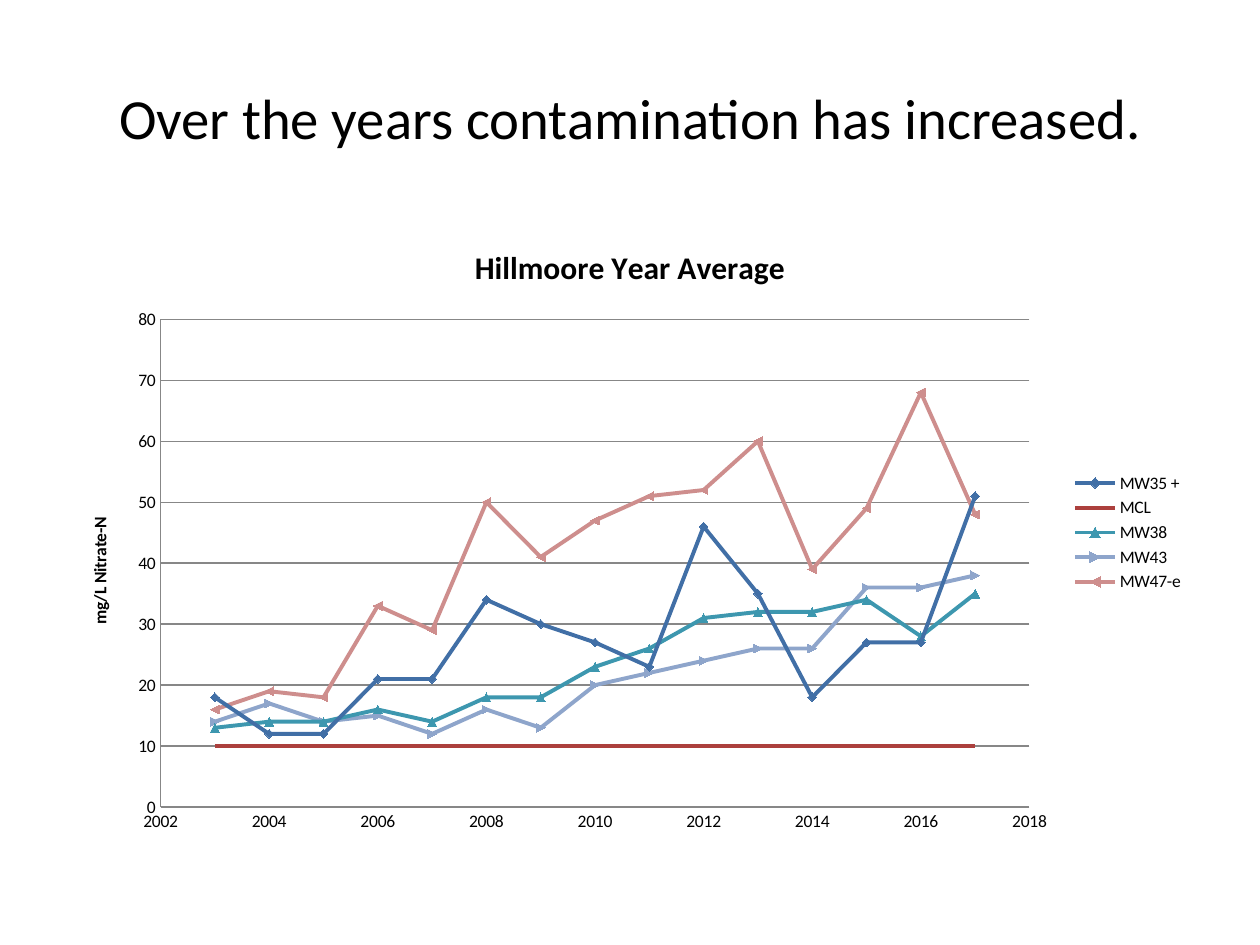
from pptx import Presentation
from pptx.chart.data import XyChartData
from pptx.dml.color import RGBColor
from pptx.enum.chart import (XL_CHART_TYPE, XL_LEGEND_POSITION,
                             XL_MARKER_STYLE, XL_TICK_MARK)
from pptx.enum.text import MSO_ANCHOR, PP_ALIGN
from pptx.util import Cm, Pt

FONT = "Calibri"
BLACK = RGBColor(0x00, 0x00, 0x00)
GRID_GRAY = RGBColor(0x87, 0x87, 0x87)
BLUE = RGBColor(0x41, 0x6F, 0xA6)
RED = RGBColor(0xAC, 0x40, 0x3D)
TEAL = RGBColor(0x3D, 0x97, 0xAF)
LIGHT_BLUE = RGBColor(0x8E, 0xA5, 0xCB)
PINK = RGBColor(0xCE, 0x8E, 0x8D)

YEARS = range(2003, 2018)
# Name, colour, marker, yearly averages
WELLS = [
    ("MW35 +", BLUE, XL_MARKER_STYLE.DIAMOND,
     [18, 12, 12, 21, 21, 34, 30, 27, 23, 46, 35, 18, 27, 27, 51]),
    ("MCL", RED, XL_MARKER_STYLE.NONE, [10] * len(YEARS)),
    ("MW38", TEAL, XL_MARKER_STYLE.TRIANGLE,
     [13, 14, 14, 16, 14, 18, 18, 23, 26, 31, 32, 32, 34, 28, 35]),
    ("MW43", LIGHT_BLUE, XL_MARKER_STYLE.AUTOMATIC,
     [14, 17, 14, 15, 12, 16, 13, 20, 22, 24, 26, 26, 36, 36, 38]),
    ("MW47-e", PINK, XL_MARKER_STYLE.AUTOMATIC,
     [16, 19, 18, 33, 29, 50, 41, 47, 51, 52, 60, 39, 49, 68, 48]),
]


def format_text(text_frame, size, bold=False):
    font = text_frame.paragraphs[0].runs[0].font
    font.name, font.size, font.bold = FONT, Pt(size), bold
    font.color.rgb = BLACK


def add_title(slide, text):
    shape = slide.shapes.add_textbox(Cm(1.27), Cm(0.76), Cm(22.86), Cm(3.18))
    text_frame = shape.text_frame
    text_frame.word_wrap = True
    text_frame.vertical_anchor = MSO_ANCHOR.MIDDLE
    text_frame.text = text
    text_frame.paragraphs[0].alignment = PP_ALIGN.CENTER
    format_text(text_frame, 32.4)


def format_axis(axis, minimum, maximum, step):
    axis.minimum_scale, axis.maximum_scale = minimum, maximum
    axis.major_unit = step
    axis.major_tick_mark = axis.minor_tick_mark = XL_TICK_MARK.NONE
    axis.format.line.color.rgb = GRID_GRAY
    axis.tick_labels.number_format = "General"
    axis.tick_labels.number_format_is_linked = False


def format_series(series, color, marker):
    series.smooth = False
    series.format.line.color.rgb = color
    series.format.line.width = Pt(2.25)
    series.marker.style = marker
    if marker != XL_MARKER_STYLE.NONE:
        series.marker.size = 5
        series.marker.format.fill.solid()
        series.marker.format.fill.fore_color.rgb = color
        series.marker.format.line.color.rgb = color


def add_well_chart(slide, title):
    chart_data = XyChartData()
    for name, _, _, averages in WELLS:
        series_data = chart_data.add_series(name)
        for year, average in zip(YEARS, averages):
            series_data.add_data_point(year, average)
    chart = slide.shapes.add_chart(
        XL_CHART_TYPE.XY_SCATTER_LINES,
        Cm(1.27), Cm(4.45), Cm(22.86), Cm(12.57), chart_data).chart
    chart.font.name, chart.font.size = FONT, Pt(10)
    chart.font.color.rgb = BLACK
    chart.plots[0].vary_by_categories = False

    # Titles and legend
    chart.has_title = True
    chart.chart_title.text_frame.text = title
    format_text(chart.chart_title.text_frame, 18, bold=True)
    chart.chart_title.include_in_layout = False
    chart.has_legend = True
    chart.legend.position = XL_LEGEND_POSITION.RIGHT
    chart.legend.include_in_layout = False

    # Axes
    format_axis(chart.category_axis, 2002, 2018, 2)
    chart.category_axis.has_major_gridlines = False
    format_axis(chart.value_axis, 0, 80, 10)
    chart.value_axis.has_major_gridlines = True
    chart.value_axis.major_gridlines.format.line.color.rgb = GRID_GRAY
    axis_title = chart.value_axis.axis_title
    axis_title.text_frame.text = "mg/L Nitrate-N"
    format_text(axis_title.text_frame, 10, bold=True)

    # Lines
    for series, (_, color, marker, _) in zip(chart.plots[0].series, WELLS):
        format_series(series, color, marker)


def main():
    presentation = Presentation()
    presentation.slide_width, presentation.slide_height = Cm(25.4), Cm(19.05)
    slide = presentation.slides.add_slide(presentation.slide_layouts[6])
    add_title(slide, "Over the years contamination has increased.")
    add_well_chart(slide, "Hillmoore Year Average")
    presentation.save("out.pptx")


if __name__ == "__main__":
    main()
